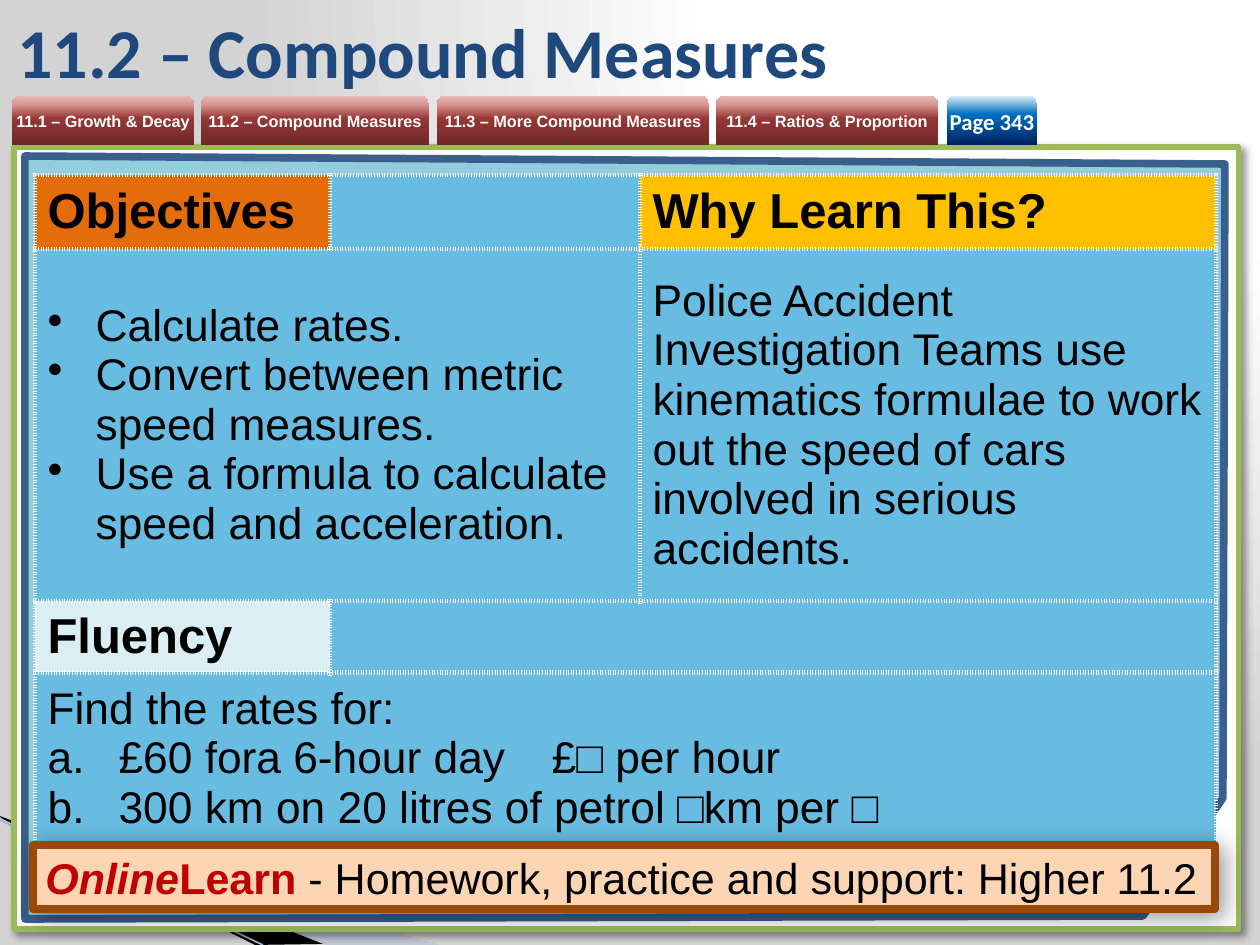
"""Build the Compound Measures lesson slide with its tabs, table and homework bar."""
from lxml.etree import SubElement
from pptx import Presentation
from pptx.dml.color import RGBColor
from pptx.enum.shapes import MSO_CONNECTOR, MSO_SHAPE
from pptx.enum.text import MSO_ANCHOR, PP_ALIGN
from pptx.oxml import parse_xml
from pptx.oxml.ns import nsdecls, qn
from pptx.util import Pt

UNIT = 914400 / 126
THEME = {
    "sans": "Arial", "head": "Calibri",
    "title": 40, "label": 28, "body": 25.3, "bar": 24.6, "page": 13, "tab": 9.3,
    "navy": "1F497D", "black": "000000", "white": "FFFFFF", "red": "C00000",
    "green": "9BBB59", "aqua": "93CDDD", "blue": "3A5F8C", "sky": "68BCE1",
    "orange": "E46C0A", "gold": "FFC000", "ice": "DBEEF4",
    "peach": "FCD5B5", "brown": "984807", "haze": "A7B9DB", "steel": "9EB3D6",
    "back": [(0, "FFFFFF"), (40, "FFFFFF"), (100, "D3D3D3")],
    "ruby": [(0, "6F2927"), (54, "953735"), (83, "D99694"), (100, "E6B9B8")],
    "deep": [(0, "002060"), (63, "0070C0"), (100, "DBEEF4")],
}


def put(frame, text, size="body", color="black", font="sans", bold=False, italic=False,
        align=None, lead=None, mark=None, hang=0, stop=None, join=False):
    para = frame.paragraphs[-1]
    if para.runs and not join:
        para = frame.add_paragraph()
    if align:
        para.alignment = align
    if lead:
        para.line_spacing = Pt(lead)
    if mark:
        props = para._p.get_or_add_pPr()
        props.set("marL", str(int(hang * UNIT)))
        props.set("indent", str(int(-hang * UNIT)))
        tag, key, value = mark
        SubElement(props, qn(tag)).set(key, value)
        if stop:
            tab = SubElement(SubElement(props, qn("a:tabLst")), qn("a:tab"))
            tab.set("pos", str(int(stop * UNIT)))
            tab.set("algn", "l")
    run = para.add_run()
    run.text = text
    run.font.size = Pt(THEME[size])
    run.font.name = THEME[font]
    run.font.bold = bold
    run.font.italic = italic
    run.font.color.rgb = RGBColor.from_string(THEME[color])


def style(shape, fill, line=None, width=0, blur=0, fade=None):
    shape.shadow.inherit = False
    if isinstance(THEME[fill], list):
        shape.fill.gradient()
        shape.fill.gradient_angle = 90
        stops = shape._element.find(".//" + qn("a:gsLst"))
        stops.clear()
        for at, color in THEME[fill]:
            stop = SubElement(stops, qn("a:gs"), pos=str(at * 1000))
            SubElement(stop, qn("a:srgbClr"), val=color)
    else:
        shape.fill.solid()
        shape.fill.fore_color.rgb = RGBColor.from_string(THEME[fill])
    if fade:
        tint = shape._element.spPr.find(qn("a:solidFill"))[0]
        SubElement(tint, qn("a:alpha"), val=str(fade * 1000))
    if line:
        shape.line.color.rgb = RGBColor.from_string(THEME[line])
        shape.line.width = Pt(width)
    else:
        shape.line.fill.background()
    if blur:
        shape._element.spPr.find(qn("a:effectLst")).append(parse_xml(
            f'<a:outerShdw {nsdecls("a")} blurRad="{blur * 12700}" dist="38100" dir="2700000" '
            'algn="tl" rotWithShape="0"><a:srgbClr val="000000"><a:alpha val="40000"/>'
            '</a:srgbClr></a:outerShdw>'))


deck = Presentation()
deck.slide_width, deck.slide_height = int(1260 * UNIT), int(945 * UNIT)
slide = deck.slides.add_slide(deck.slide_layouts[6])
shapes = slide.shapes

slide.background.fill.gradient()
grad = slide._element.find(".//" + qn("a:gradFill"))
stops = grad.find(qn("a:gsLst"))
stops.clear()
for at, color in THEME["back"]:
    stop = SubElement(stops, qn("a:gs"), pos=str(at * 1000))
    SubElement(stop, qn("a:srgbClr"), val=color)
grad.replace(grad.find(qn("a:lin")), parse_xml(
    f'<a:path {nsdecls("a")} path="circle"><a:fillToRect l="65000" b="98000"/></a:path>'))

for points, fill, fade in (
    ([(0, 819), (440, 945), (326, 945), (0, 818)], "haze", 40),
    ([(0, 816), (323, 944), (255, 945), (1, 818)], "black", None),
):
    path = shapes.build_freeform(*points[0], scale=UNIT)
    path.add_line_segments(points[1:])
    style(path.convert_to_shape(), fill, fade=fade)

edge = shapes.add_connector(MSO_CONNECTOR.STRAIGHT,
                            *(int(n * UNIT) for n in (0, 820, 263, 945)))
edge.line.color.rgb = RGBColor.from_string(THEME["steel"])
edge.line.width = Pt(0.95)
SubElement(edge._element.spPr, qn("a:effectLst"))

frame = shapes.add_shape(MSO_SHAPE.RECTANGLE, *(int(n * UNIT) for n in (14, 147, 1225, 782)))
style(frame, "white", "green", 3, blur=4)

path = shapes.build_freeform(25, 156, scale=UNIT)
path.add_line_segments([(1225, 164), (1223, 798), (1143, 916), (25, 919)])
style(path.convert_to_shape(), "aqua", "blue", 4.33)

for left, width, text, fill, size, font, lead in (
    (12, 182, "11.1 – Growth & Decay", "ruby", "tab", "sans", 10),
    (201, 228, "11.2 – Compound Measures", "ruby", "tab", "sans", 10),
    (437, 272, "11.3 – More Compound Measures", "ruby", "tab", "sans", 10),
    (716, 222, "11.4 – Ratios & Proportion", "ruby", "tab", "sans", 10),
    (947, 90, "Page 343", "deep", "page", "head", None),
):
    tab = shapes.add_shape(MSO_SHAPE.ROUND_2_SAME_RECTANGLE,
                           *(int(n * UNIT) for n in (left, 96, width, 49)))
    style(tab, fill)
    box = tab.text_frame
    box.margin_left = box.margin_right = box.margin_top = box.margin_bottom = 0
    box.vertical_anchor = MSO_ANCHOR.MIDDLE
    put(box, text, size=size, color="white", font=font, bold=True,
        align=PP_ALIGN.CENTER, lead=lead)

box = shapes.add_textbox(*(int(n * UNIT) for n in (5, 6, 1042, 90))).text_frame
box.word_wrap = True
box.vertical_anchor = MSO_ANCHOR.MIDDLE
put(box, "11.2 – Compound Measures", size="title", color="navy", font="head", bold=True)

cols, rows = (295, 310, 576), (74, 352, 67, 161)
table = shapes.add_table(len(rows), len(cols), *(
    int(n * UNIT) for n in (35, 175, sum(cols), sum(rows)))).table
table.first_row = table.horz_banding = False
for col, width in zip(table.columns, cols):
    col.width = int(width * UNIT)
for row, height in zip(table.rows, rows):
    row.height = int(height * UNIT)

tints = {(0, 0): "orange", (0, 2): "gold", (2, 0): "ice"}
for r in range(len(rows)):
    for c in range(len(cols)):
        cell = table.cell(r, c)
        cell.vertical_anchor = MSO_ANCHOR.MIDDLE
        for side in "LRTB":
            cell._tc.get_or_add_tcPr().append(parse_xml(
                f'<a:ln{side} {nsdecls("a")} w="38100"><a:solidFill><a:srgbClr '
                f'val="{THEME["white"]}"/></a:solidFill><a:prstDash val="sysDot"/></a:ln{side}>'))
        cell.fill.solid()
        cell.fill.fore_color.rgb = RGBColor.from_string(THEME[tints.get((r, c), "sky")])
for r, start, end in ((1, 0, 1), (2, 1, 2), (3, 0, 2)):
    table.cell(r, start).merge(table.cell(r, end))

for r, c, text in ((0, 0, "Objectives"), (0, 2, "Why Learn This?"), (2, 0, "Fluency")):
    put(table.cell(r, c).text_frame, text, size="label", bold=True)
for text in ("Calculate rates.", "Convert between metric speed measures.",
             "Use a formula to calculate speed and acceleration."):
    put(table.cell(1, 0).text_frame, text, mark=("a:buChar", "char", "•"), hang=48)
put(table.cell(1, 2).text_frame, "Police Accident Investigation Teams use kinematics formulae "
    "to work out the speed of cars involved in serious accidents.")
tasks = table.cell(3, 0).text_frame
put(tasks, "Find the rates for:")
for text, stop in (("£60 fora 6-hour day\t£□ per hour", 435),
                   ("300 km on 20 litres of petrol □km per □", None)):
    put(tasks, text, mark=("a:buAutoNum", "type", "alphaLcPeriod"), hang=71, stop=stop)

bar = shapes.add_shape(MSO_SHAPE.RECTANGLE, *(int(n * UNIT) for n in (33, 845, 1182, 64)))
style(bar, "peach", "brown", 4.33, blur=13)
box = bar.text_frame
box.word_wrap = True
box.vertical_anchor = MSO_ANCHOR.MIDDLE
put(box, "Online", size="bar", color="red", bold=True, italic=True, align=PP_ALIGN.LEFT)
put(box, "Learn ", size="bar", color="red", bold=True, join=True)
put(box, "- Homework, practice and support: Higher 11.2", size="bar", join=True)

deck.save("out.pptx")
